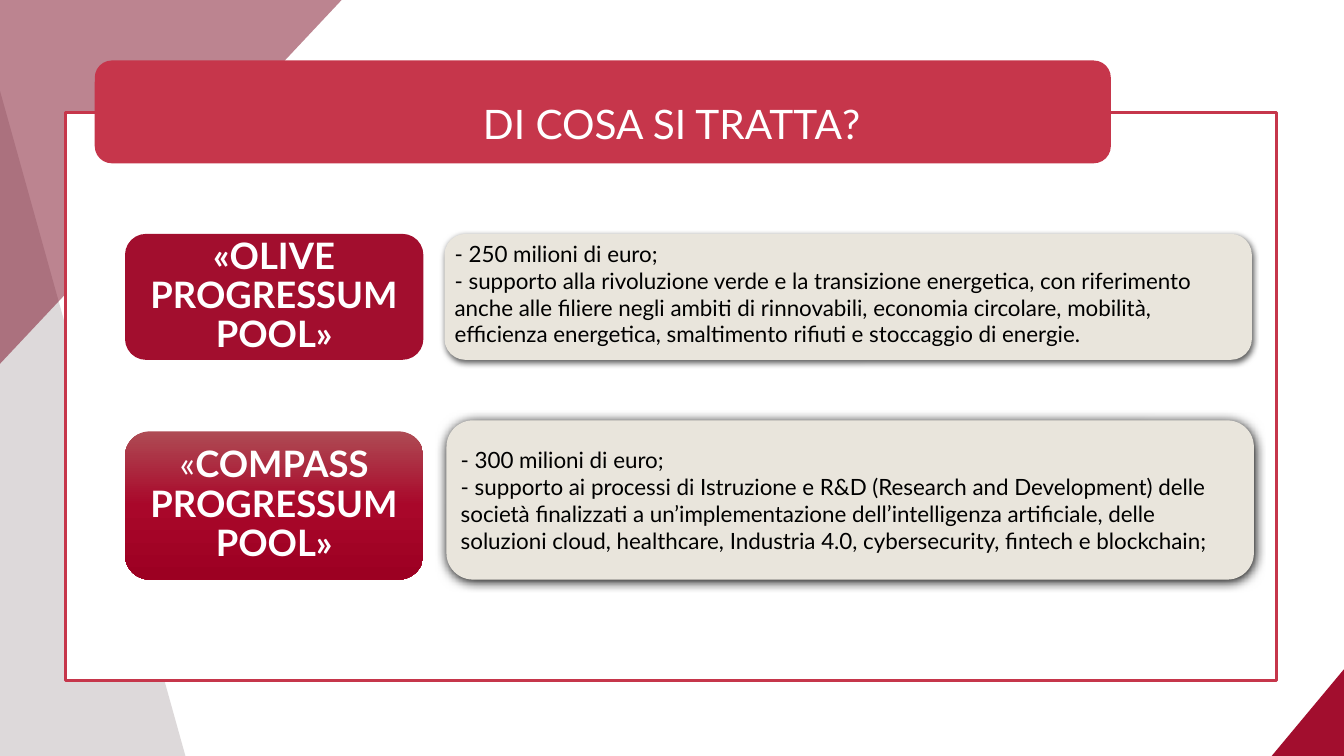
from copy import deepcopy
from lxml.etree import SubElement
from pptx import Presentation
from pptx.dml.color import RGBColor
from pptx.enum.shapes import MSO_SHAPE
from pptx.enum.text import MSO_ANCHOR, MSO_AUTO_SIZE, PP_ALIGN
from pptx.oxml.ns import qn
from pptx.util import Inches, Pt

FONT = "Lato"
RED, CRIMSON, SAND, WHITE, BLACK = "C6364B", "A20E2E", "E9E5DC", "FFFFFF", "000000"

prs = Presentation()
prs.slide_width, prs.slide_height = Inches(13.33), Inches(7.5)
COL, ROW = prs.slide_width / 40, prs.slide_height / 30
s = prs.slides.add_slide(prs.slide_layouts[5])


def rgb(color):
    return RGBColor.from_string(color)


def add_box(kind, x, y, w, h, color):
    """Plain filled shape, placed in grid columns and rows."""
    sp = s.shapes.add_shape(kind, int(x * COL), int(y * ROW), int(w * COL), int(h * ROW))
    sp.shadow.inherit = False
    sp.fill.solid()
    sp.fill.fore_color.rgb = rgb(color)
    sp.line.fill.background()
    return sp


# Corner triangles: position, colour, flip, opacity in percent
for x, y, w, h, color, flip, opacity in [
    (37.85, 26.56, 2.15, 3.44, CRIMSON, "flipH", 100),
    (0, 3.6, 5.52, 26.4, "BDB5B6", None, 50),
    (0, 0, 10.17, 14.44, "7A0B23", "flipV", 50),
]:
    sp = add_box(MSO_SHAPE.RIGHT_TRIANGLE, x, y, w, h, color)
    if flip:
        sp._element.spPr.find(qn("a:xfrm")).set(flip, "1")
    clr = sp._element.spPr.find(qn("a:solidFill"))[0]
    SubElement(clr, qn("a:alpha"), val=str(opacity * 1000))

# Framed panel and title banner
panel = add_box(MSO_SHAPE.RECTANGLE, 1.95, 4.48, 36.03, 22.52, WHITE)
panel.line.color.rgb = rgb(RED)
panel.line.width = Pt(2.25)
add_box(MSO_SHAPE.ROUNDED_RECTANGLE, 2.82, 2.4, 30.24, 4.08, RED)

# Title, brought in front of the banner
title = s.shapes.title
title.left, title.top = int(6.15 * COL), int(2.52 * ROW)
title.width, title.height = int(27.69 * COL), int(3.56 * ROW)
s.shapes._spTree.append(title._element)
tf = title.text_frame
tf.text = "DI COSA SI TRATTA?"
tf.auto_size = MSO_AUTO_SIZE.NONE
tf.vertical_anchor = MSO_ANCHOR.BOTTOM
p = tf.paragraphs[0]
p.alignment, p.line_spacing = PP_ALIGN.CENTER, 0.9
p.font.name, p.font.size, p.font.color.rgb = FONT, Pt(29), rgb(WHITE)

# Fund labels: top, height, runs as (text, bold)
labels = []
for y, h, runs in [
    (9.28, 5, [("«OLIVE PROGRESSUM POOL»", True)]),
    (17.12, 5.88, [("«", False), ("COMPASS PROGRESSUM POOL»", True)]),
]:
    sp = add_box(MSO_SHAPE.ROUNDED_RECTANGLE, 3.72, y, 8.88, h, CRIMSON)
    labels.append(sp)
    tf = sp.text_frame
    tf.word_wrap, tf.vertical_anchor = True, MSO_ANCHOR.MIDDLE
    tf.margin_left = tf.margin_right = Inches(0.17)
    p = tf.paragraphs[0]
    p.alignment, p.line_spacing = PP_ALIGN.CENTER, 0.9
    p.font.name, p.font.size, p.font.color.rgb = FONT, Pt(26), rgb(WHITE)
    for text, bold in runs:
        r = p.add_run()
        r.text, r.font.bold = text, bold

# Gradient of the second label, dark end at the bottom
fill = labels[1].fill
fill.gradient()
fill.gradient_angle = 270
last = fill.gradient_stops[1]._gs
last.addprevious(deepcopy(last))
for stop, position, color in zip(fill.gradient_stops, (0, 0.5, 1), ("AE4B54", "A9072A", "9C0022")):
    stop.position = position
    stop.color.rgb = rgb(color)

# Descriptions: place, anchor, side margin, shadow (opacity, blur, distance), lines
for x, y, h, anchor, margin, (opacity, blur, dist), lines in [
    (13.23, 9.28, 5, MSO_ANCHOR.TOP, 0.1, (63, 4.5, 1.5), [
        "- 250 milioni di euro;",
        "- supporto alla rivoluzione verde e la transizione energetica, con riferimento "
        "anche alle filiere negli ambiti di rinnovabili, economia circolare, mobilità, "
        "efficienza energetica, smaltimento rifiuti e stoccaggio di energie.",
    ]),
    (13.29, 16.68, 6.32, MSO_ANCHOR.MIDDLE, 0.14, (100, 8.5, 1), [
        "- 300 milioni di euro;",
        "- supporto ai processi di Istruzione e R&D (Research and Development) delle "
        "società finalizzati a un’implementazione dell’intelligenza artificiale, delle "
        "soluzioni cloud, healthcare, Industria 4.0, cybersecurity, fintech e blockchain;",
    ]),
]:
    sp = add_box(MSO_SHAPE.ROUNDED_RECTANGLE, x, y, 24.03, h, SAND)
    effects = sp._element.spPr.find(qn("a:effectLst"))
    shadow = SubElement(effects, qn("a:outerShdw"), blurRad=str(Pt(blur)), dist=str(Pt(dist)),
                        dir="5400000", algn="ctr", rotWithShape="0")
    clr = SubElement(shadow, qn("a:srgbClr"), val=BLACK)
    SubElement(clr, qn("a:alpha"), val=str(opacity * 1000))
    tf = sp.text_frame
    tf.word_wrap, tf.vertical_anchor = True, anchor
    # The rounded corners already inset the text by 0.29 of the radius
    inset = 0.29 * sp.adjustments[0] * sp.height
    tf.margin_left = tf.margin_right = int(Inches(margin) - inset)
    tf.margin_top = tf.margin_bottom = int(Inches(0.06) - inset)
    tf.text = "\n".join(lines)
    for p in tf.paragraphs:
        p.alignment = PP_ALIGN.LEFT
        p.font.name, p.font.size, p.font.color.rgb = FONT, Pt(16), rgb(BLACK)

prs.save("out.pptx")
